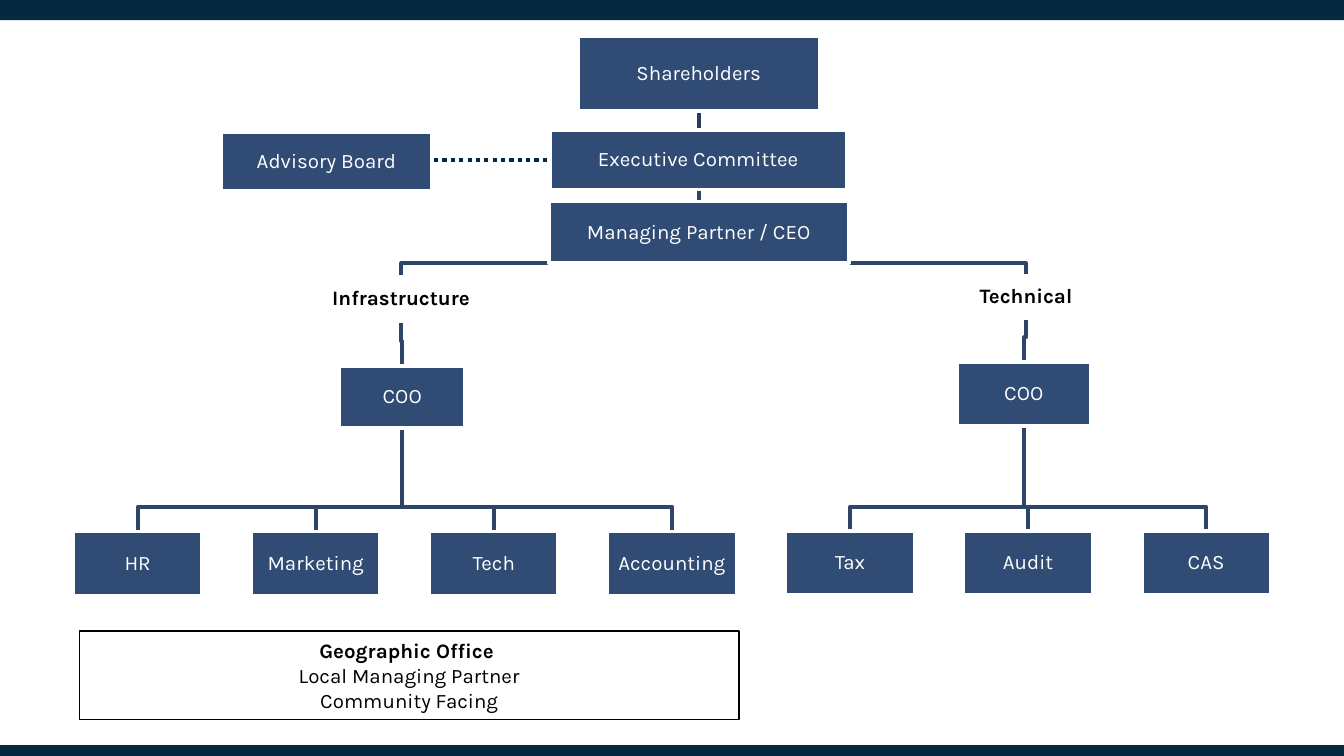
from lxml import etree
from pptx import Presentation
from pptx.dml.color import RGBColor
from pptx.enum.dml import MSO_LINE
from pptx.enum.shapes import MSO_CONNECTOR, MSO_SHAPE
from pptx.enum.text import MSO_ANCHOR, PP_ALIGN
from pptx.oxml.ns import qn
from pptx.util import Pt

PX = 4572  # 200 px to the inch
RECT = MSO_SHAPE.RECTANGLE
STRAIGHT = MSO_CONNECTOR.STRAIGHT
DOTTED = MSO_LINE.ROUND_DOT  # sysDot
MIDDLE = MSO_ANCHOR.MIDDLE
CENTER = PP_ALIGN.CENTER

NAVY, BLUE, LINK = "05293E", "304C74", "2C4569"
WHITE, BLACK = "FFFFFF", "000000"
rgb = RGBColor.from_string


def add_box(x, y, w, h, lines=(), fill=None, line=None, line_pt=2,
            color=WHITE, bold=False, inset=2, spacing=0.9):
    """Add a rectangle with centred lines of text; bold applies to the first line."""
    sp = s.shapes.add_shape(RECT, x * PX, y * PX, w * PX, h * PX)
    sp.shadow.inherit = False
    if fill:
        sp.fill.solid()
        sp.fill.fore_color.rgb = rgb(fill)
    else:
        sp.fill.background()
    if line:
        sp.line.color.rgb = rgb(line)
        sp.line.width = Pt(line_pt)
    else:
        sp.line.fill.background()
    if not lines:
        return
    tf = sp.text_frame
    tf.word_wrap = True
    tf.vertical_anchor = MIDDLE
    tf.margin_left = tf.margin_right = tf.margin_top = tf.margin_bottom = inset * PX
    tf.text = "\n".join(lines)
    for i, p in enumerate(tf.paragraphs):
        p.alignment = CENTER
        p.line_spacing = spacing
        font = p.runs[0].font
        font.name, font.size = "Karla", Pt(11)
        font.bold = bold and i == 0
        font.color.rgb = rgb(color)


def add_link(points, color=LINK, width=2, dash=None):
    """Join points with a connector if there are two, otherwise with a bent outline."""
    if len(points) == 2:
        (x1, y1), (x2, y2) = points
        sp = s.shapes.add_connector(STRAIGHT, x1 * PX, y1 * PX, x2 * PX, y2 * PX)
        etree.SubElement(sp._element.spPr, qn("a:effectLst"))
    else:
        builder = s.shapes.build_freeform(*points[0], scale=PX)
        builder.add_line_segments(points[1:], close=False)
        sp = builder.convert_to_shape()
        sp.fill.background()
        sp.shadow.inherit = False
    sp.line.color.rgb = rgb(color)
    sp.line.width = Pt(width)
    if dash:
        sp.line.dash_style = dash


prs = Presentation()
prs.slide_width, prs.slide_height = 2000 * PX, 1125 * PX
s = prs.slides.add_slide(prs.slide_layouts[6])

# Bars at the top and bottom edges
add_box(0, 0, 2000, 30, fill=NAVY)
add_box(0, 1109, 2000, 16, fill=NAVY)

# Each department row: left edge, top, names, and the COO's centre and bottom
STEP, DEPT_W, DEPT_H = 265, 192, 96
departments = [
    (109, 791, ["HR", "Marketing", "Tech", "Accounting"], 598, 637),
    (1169, 790, ["Tax", "Audit", "CAS"], 1524, 634),
]

# Links go behind the boxes
for left, top, names, coo_x, coo_bottom in departments:
    for i in range(len(names)):
        x = left + i * STEP + DEPT_W // 2
        add_link([(coo_x, coo_bottom), (coo_x, 754), (x, 754), (x, top)])
for x in (597, 1527):
    add_link([(1040, 392), (x, 392), (x, 412)])
add_link([(597, 478), (597, 508), (598, 508), (598, 546)])
add_link([(1527, 474), (1527, 502), (1524, 502), (1524, 538)])
add_link([(1040, 282), (1040, 300)])
add_link([(1040, 166), (1040, 194)], color="263D5D")

# Leadership
for name, x, y, w, h in [
    ("Shareholders", 860, 54, 360, 111),
    ("Executive Committee", 818, 194, 442, 88),
    ("Managing Partner / CEO", 817, 300, 446, 92),
    ("Advisory Board", 329, 197, 314, 87),
    ("COO", 505, 545, 187, 92),
    ("COO", 1424, 539, 199, 95),
]:
    add_box(x, y, w, h, [name], fill=BLUE, line=WHITE)

# Branch headings
for name, x, y, w, h in [
    ("Infrastructure", 321, 412, 552, 66),
    ("Technical", 1352, 411, 350, 62),
]:
    add_box(x, y, w, h, [name], line=WHITE, color=BLACK, bold=True)

# Departments
for left, top, names, coo_x, coo_bottom in departments:
    for i, name in enumerate(names):
        add_box(left + i * STEP, top, DEPT_W, DEPT_H, [name],
                fill=BLUE, line=WHITE)

# Local office and the advisory link
add_box(118, 939, 982, 132,
        ["Geographic Office ", "Local Managing Partner", "Community Facing"],
        fill=WHITE, line=BLACK, line_pt=0.75, color=BLACK, bold=True,
        inset=10, spacing=1.0)
add_link([(646, 238), (818, 238)], color=NAVY, width=2.25, dash=DOTTED)

prs.save("out.pptx")
